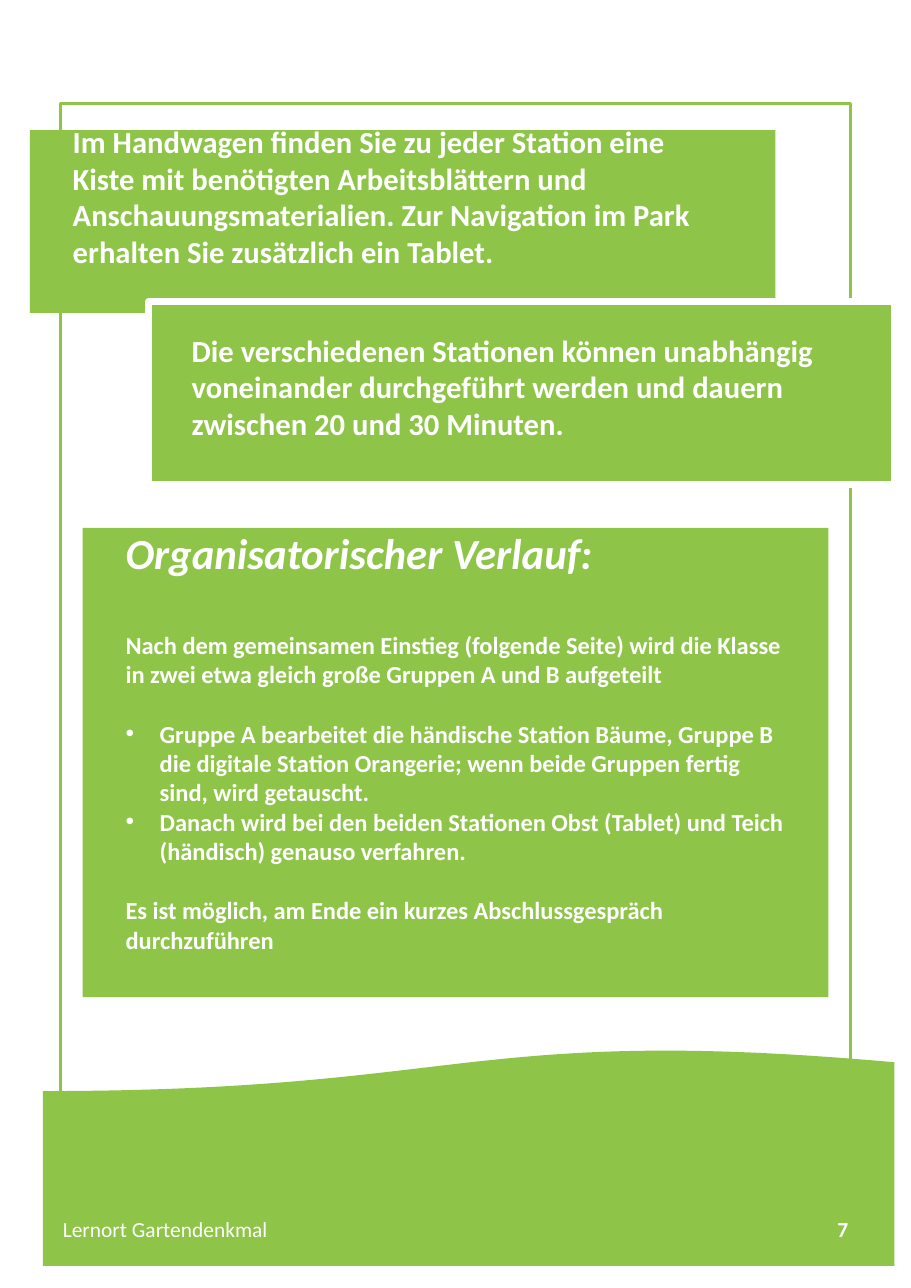
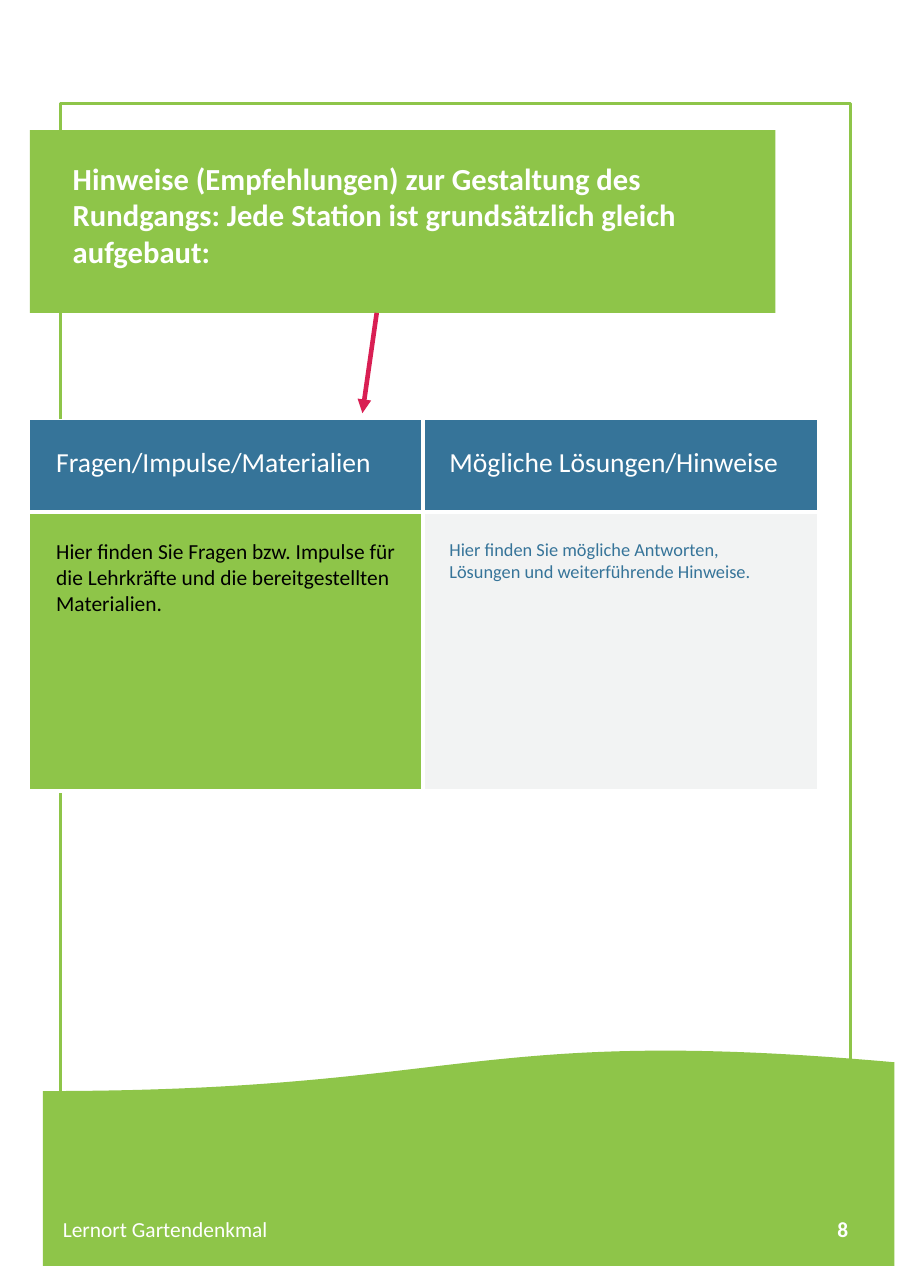
import dataclasses

import lxml.etree
import pptx
import pptx.dml.color
import pptx.enum.shapes
import pptx.enum.text
import pptx.oxml.ns
import pptx.util

Inches = pptx.util.Inches
Pt = pptx.util.Pt
Shape = pptx.enum.shapes.MSO_SHAPE
Anchor = pptx.enum.text.MSO_ANCHOR
Align = pptx.enum.text.PP_ALIGN
qn = pptx.oxml.ns.qn


@dataclasses.dataclass(frozen=True)
class Theme:
    """Colours, font and type sizes of the booklet."""

    green: str = "8EC549"
    blue: str = "367499"
    grey: str = "F2F3F3"
    red: str = "D91F53"
    white: str = "FFFFFF"
    black: str = "000000"
    font: str = "Calibri"
    heading: int = 28
    statement: int = 20
    column: int = 18
    body: int = 16
    small: int = 14
    hint: int = 12


THEME = Theme()
TITLE_BOX = (0.27, 1.18, 6.77, 1.66)


def rgb(value):
    """Return the colour object for a hex value."""
    return pptx.dml.color.RGBColor.from_string(value)


def place(shape, box):
    """Move and size a shape to a box in inches."""
    shape.left, shape.top, shape.width, shape.height = map(Inches, box)


def paint(shape, fill=None, line=None, width=0):
    """Give a shape its fill and outline."""
    if fill:
        shape.fill.solid()
        shape.fill.fore_color.rgb = rgb(fill)
    else:
        shape.fill.background()
    if line:
        shape.line.color.rgb = rgb(line)
        shape.line.width = Pt(width)
    else:
        shape.line.fill.background()


def set_frame(frame, anchor, insets):
    """Set wrapping, anchor and the left, top, right and bottom insets."""
    frame.word_wrap = True
    frame.auto_size = pptx.enum.text.MSO_AUTO_SIZE.NONE
    frame.vertical_anchor = anchor
    (frame.margin_left, frame.margin_top,
     frame.margin_right, frame.margin_bottom) = map(Inches, insets)


def write(para, text, size, color=THEME.white, bold=False, italic=False, align=Align.LEFT):
    """Write and format one paragraph."""
    para.text = text
    para.alignment = align
    for span in para.runs:
        span.font.name = THEME.font
        span.font.size = Pt(size)
        span.font.color.rgb = rgb(color)
        span.font.bold = bold
        span.font.italic = italic


def set_bullet(para, bulleted):
    """Switch the bullet and its hanging indent on or off."""
    properties = para._p.get_or_add_pPr()
    indent = Inches(0.31) if bulleted else 0
    properties.set("marL", str(indent))
    properties.set("indent", str(-indent))
    if bulleted:
        lxml.etree.SubElement(properties, qn("a:buFont"), typeface="Arial")
        lxml.etree.SubElement(properties, qn("a:buChar"), char="•")
    else:
        lxml.etree.SubElement(properties, qn("a:buNone"))


def style_card(card, box, fill=THEME.green, line=None, width=0):
    """Place a green card whose text stands at its bottom."""
    place(card, box)
    paint(card, fill, line, width)
    set_frame(card.text_frame, Anchor.BOTTOM, (0.39, 0.2, 0.39, 0.39))


def add_statement(card, box, text, **outline):
    """Turn a shape or placeholder into a card with one bold statement."""
    style_card(card, box, **outline)
    write(card.text_frame.paragraphs[0], text, THEME.statement, bold=True)


def add_rectangle(page, kind, box):
    """Add a preset shape without a shadow."""
    shape = page.shapes.add_shape(kind, *map(Inches, box))
    shape.shadow.inherit = False
    return shape


def add_footer(page, box, number):
    """Draw the wave with the booklet name and page number."""
    left, top, width, height = box
    wave = add_rectangle(page, Shape.FLOWCHART_DOCUMENT, box)
    wave.rotation = 180
    paint(wave, THEME.green)
    labels = [
        ("Lernort Gartendenkmal", 0.18, 2.02, (0, 0.05, 0.1, 0.05), False, Align.LEFT),
        (str(number), 5.45, 1.86, (0.1, 0.05, 0, 0.05), True, Align.RIGHT),
    ]
    for text, offset, label_width, insets, bold, align in labels:
        label = page.shapes.add_textbox(
            *map(Inches, (left + offset, top + 1.33, label_width, 0.62)))
        set_frame(label.text_frame, Anchor.MIDDLE, insets)
        write(label.text_frame.paragraphs[0], text, THEME.small, bold=bold, align=align)


def add_page(deck, layout, number, statement):
    """Add a page with footer, green frame and title card."""
    page = deck.slides.add_slide(deck.slide_layouts.get_by_name(layout))
    add_statement(page.shapes.title, TITLE_BOX, statement)
    add_footer(page, (0.39, 9.51, 7.73, 1.98), number)
    border = add_rectangle(page, Shape.RECTANGLE, (0.55, 0.94, 7.17, 9.82))
    paint(border, line=THEME.green, width=2.25)
    return page


def fill_procedure(card, box):
    """Fill the body placeholder with the course of the visit."""
    style_card(card, box)
    rows = [
        ("Organisatorischer Verlauf:", 0, False),
        ("Nach dem gemeinsamen Einstieg (folgende Seite) wird die Klasse in zwei "
         "etwa gleich große Gruppen A und B aufgeteilt", 34, False),
        ("Gruppe A bearbeitet die händische Station Bäume, Gruppe B die digitale "
         "Station Orangerie; wenn beide Gruppen fertig sind, wird getauscht.", 19.5, True),
        ("Danach wird bei den beiden Stationen Obst (Tablet) und Teich (händisch) "
         "genauso verfahren.", 0, True),
        ("Es ist möglich, am Ende ein kurzes Abschlussgespräch durchzuführen", 19.5, False),
    ]
    frame = card.text_frame
    frame.text = "\n".join(text for text, _, _ in rows)
    for index, (para, (text, gap, bulleted)) in enumerate(zip(frame.paragraphs, rows)):
        is_heading = index == 0
        set_bullet(para, bulleted)
        para.space_before = Pt(gap)
        write(para, text, THEME.heading if is_heading else THEME.body,
              bold=True, italic=is_heading)


def add_cell_border(cell, side):
    """Draw a white border on one side of a cell."""
    edge = lxml.etree.SubElement(
        cell._tc.get_or_add_tcPr(), qn("a:ln" + side), w=str(Pt(3)))
    paint_node = lxml.etree.SubElement(edge, qn("a:solidFill"))
    lxml.etree.SubElement(paint_node, qn("a:srgbClr"), val=THEME.white)


def add_station_table(page, box):
    """Add the table that explains how a station is laid out."""
    rows = [
        [("Fragen/Impulse/Materialien", THEME.column, THEME.white, THEME.blue),
         ("Mögliche Lösungen/Hinweise", THEME.column, THEME.white, THEME.blue)],
        [("Hier finden Sie Fragen bzw. Impulse für die Lehrkräfte und die "
          "bereitgestellten Materialien.", THEME.small, THEME.black, THEME.green),
         ("Hier finden Sie mögliche Antworten, Lösungen und weiterführende Hinweise.",
          THEME.hint, THEME.blue, THEME.grey)],
    ]
    table = page.shapes.add_table(2, 2, *map(Inches, box)).table
    table.first_row = table.horz_banding = False
    for column, width in zip(table.columns, (3.57, 3.58)):
        column.width = Inches(width)
    for row, height in zip(table.rows, (0.84, 2.53)):
        row.height = Inches(height)
    for row_index, row in enumerate(rows):
        for column_index, (text, size, color, fill) in enumerate(row):
            cell = table.cell(row_index, column_index)
            sides = ("R", "L")[column_index] + ("", "T")[row_index] + "B"
            for side in sides:
                add_cell_border(cell, side)
            cell.fill.solid()
            cell.fill.fore_color.rgb = rgb(fill)
            cell.margin_left = cell.margin_right = Inches(0.24)
            cell.margin_top = cell.margin_bottom = Inches(0.24)
            write(cell.text_frame.paragraphs[0], text, size, color)


def add_arrow(page, start, end):
    """Draw a red arrow between two points."""
    arrow = page.shapes.add_connector(
        pptx.enum.shapes.MSO_CONNECTOR.STRAIGHT, *map(Inches, start + end))
    arrow.line.color.rgb = rgb(THEME.red)
    arrow.line.width = Pt(3)
    lxml.etree.SubElement(arrow.line._get_or_add_ln(), qn("a:tailEnd"), type="triangle")
    lxml.etree.SubElement(arrow._element.spPr, qn("a:effectLst"))


def build_organisation_page(deck):
    """Build the page on materials, timing and procedure."""
    page = add_page(
        deck, "Title and Content", 7,
        "Im Handwagen finden Sie zu jeder Station eine Kiste mit benötigten "
        "Arbeitsblättern und Anschauungsmaterialien. Zur Navigation im Park "
        "erhalten Sie zusätzlich ein Tablet.")
    box = (1.35, 2.74, 6.77, 1.66)
    add_statement(
        add_rectangle(page, Shape.RECTANGLE, box), box,
        "Die verschiedenen Stationen können unabhängig voneinander durchgeführt "
        "werden und dauern zwischen 20 und 30 Minuten.",
        line=THEME.white, width=4.5)
    fill_procedure(page.placeholders[1], (0.75, 4.79, 6.77, 4.26))


def build_station_page(deck):
    """Build the page on the layout of a station."""
    page = add_page(
        deck, "Title Only", 8,
        "Hinweise (Empfehlungen) zur Gestaltung des Rundgangs: Jede Station ist "
        "grundsätzlich gleich aufgebaut:")
    add_station_table(page, (0.27, 3.81, 7.15, 3.37))
    add_arrow(page, (3.42, 2.84), (3.29, 3.75))


def main():
    """Build and save the deck."""
    deck = pptx.Presentation()
    deck.slide_width, deck.slide_height = Inches(8.27), Inches(11.69)
    build_organisation_page(deck)
    build_station_page(deck)
    deck.save("out.pptx")


if __name__ == "__main__":
    main()
